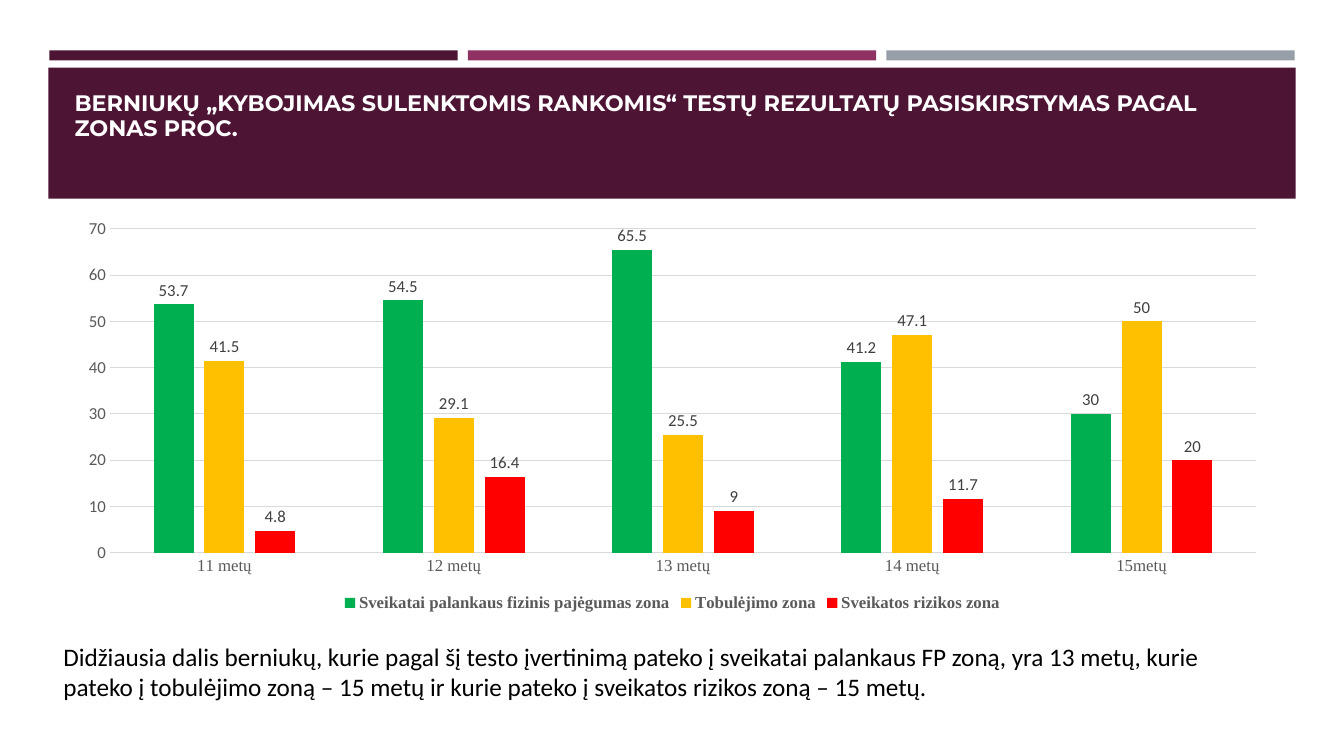
from lxml import etree
from pptx import Presentation
from pptx import util as u
from pptx.chart.data import CategoryChartData
from pptx.dml.color import RGBColor
from pptx.enum import chart as charts, shapes, text

PX = 9144  # 100 px to the inch

COLORS = {
    "plum": "4D1434", "magenta": "903163", "steel": "969FA7",
    "white": "FFFFFF", "black": "000000",
    "green": "00B050", "amber": "FFC000", "red": "FF0000",
    "axis": "595959", "label": "404040", "grid": "D9D9D9",
}
AGES = ["11 metų", "12 metų", "13 metų", "14 metų", "15metų"]
ZONES = [
    ("Sveikatai palankaus fizinis pajėgumas zona", "green", [53.7, 54.5, 65.5, 41.2, 30]),
    ("Tobulėjimo zona", "amber", [41.5, 29.1, 25.5, 47.1, 50]),
    ("Sveikatos rizikos zona", "red", [4.8, 16.4, 9, 11.7, 20]),
]
TITLE = "BERNIUKŲ „KYBOJIMAS SULENKTOMIS RANKOMIS“ TESTŲ REZULTATŲ PASISKIRSTYMAS PAGAL ZONAS PROC."
SUMMARY = ("Didžiausia dalis berniukų, kurie pagal šį testo įvertinimą pateko į sveikatai "
           "palankaus FP zoną, yra 13 metų, kurie pateko į tobulėjimo zoną – 15 metų "
           "ir kurie pateko į sveikatos rizikos zoną – 15 metų.")


def color(name):
    return RGBColor.from_string(COLORS[name])


def place(*lengths):
    return [length * PX for length in lengths]


def style_font(font, name, size, shade, bold=False):
    font.name, font.size, font.bold = name, u.Pt(size), bold
    font.color.rgb = color(shade)


def style_line(line, shade):
    line.color.rgb = color(shade)
    line.width = u.Pt(0.75)


def add_bar(page, left, top, width, height, shade):
    bar = page.shapes.add_shape(shapes.MSO_SHAPE.RECTANGLE, *place(left, top, width, height))
    bar.shadow.inherit = False
    bar.fill.solid()
    bar.fill.fore_color.rgb = color(shade)
    bar.line.fill.background()


def write(box, words, anchor, font_name, size, shade, bold=False):
    frame = box.text_frame
    frame.word_wrap = True
    frame.auto_size = text.MSO_AUTO_SIZE.NONE
    frame.vertical_anchor = anchor
    para = frame.paragraphs[0]
    para.alignment = text.PP_ALIGN.LEFT
    span = para.add_run()
    span.text = words
    style_font(span.font, font_name, size, shade, bold)
    return para


def add_title(page):
    title = page.shapes.title
    title.left, title.top, title.width, title.height = place(64, 61, 1206, 111)
    para = write(title, TITLE, text.MSO_ANCHOR.BOTTOM, "Montserrat", 16, "white", True)
    para.line_spacing = 0.95
    title.text_frame.margin_bottom = 31 * PX
    # Bring the title in front of the band
    page.shapes._spTree.append(title._element)


def add_summary(page):
    box = page.shapes.add_textbox(*place(53, 593, 1206, 147))
    para = write(box, SUMMARY, text.MSO_ANCHOR.MIDDLE, "Calibri", 18, "black")
    para.space_after = u.Pt(6)


def style_axes(chart):
    ages, values = chart.category_axis, chart.value_axis
    for axis, font_name in ((ages, "Times New Roman"), (values, "Calibri")):
        axis.major_tick_mark = axis.minor_tick_mark = charts.XL_TICK_MARK.NONE
        style_font(axis.tick_labels.font, font_name, 12, "axis")
    style_line(ages.format.line, "grid")
    values.format.line.fill.background()
    values.minimum_scale, values.maximum_scale, values.major_unit = 0, 70, 10
    style_line(values.major_gridlines.format.line, "grid")


def add_zone_chart(page):
    data = CategoryChartData()
    data.categories = AGES
    for name, _, shares in ZONES:
        data.add_series(name, shares)
    chart = page.shapes.add_chart(
        charts.XL_CHART_TYPE.COLUMN_CLUSTERED, *place(64, 209, 1206, 402), data).chart
    chart.has_title = False
    style_font(chart.font, "Calibri", 10, "black")
    style_axes(chart)

    # Columns and their values
    plot = chart.plots[0]
    plot.gap_width, plot.overlap, plot.vary_by_categories = 219, -27, False
    for series, (_, shade, _) in zip(plot.series, ZONES):
        series.format.fill.solid()
        series.format.fill.fore_color.rgb = color(shade)
        series.invert_if_negative = False
        labels = series.data_labels
        labels.show_value = True
        labels.position = charts.XL_LABEL_POSITION.OUTSIDE_END
        style_font(labels.font, "Calibri", 12, "label")

    # Legend
    chart.has_legend = True
    chart.legend.position = charts.XL_LEGEND_POSITION.BOTTOM
    chart.legend.include_in_layout = False
    style_font(chart.legend.font, "Times New Roman", 12, "axis", True)


def main():
    deck = Presentation()
    deck.slide_width, deck.slide_height = place(1333, 750)
    page = deck.slides.add_slide(deck.slide_layouts[5])

    # Three stripes above the title band
    for index, shade in enumerate(("plum", "magenta", "steel")):
        add_bar(page, 49 + 415 * index, 50, 405, 10, shade)
    add_bar(page, 48, 67, 1237, 130, "plum")

    add_title(page)
    add_zone_chart(page)
    add_summary(page)
    deck.save("out.pptx")


if __name__ == "__main__":
    main()
